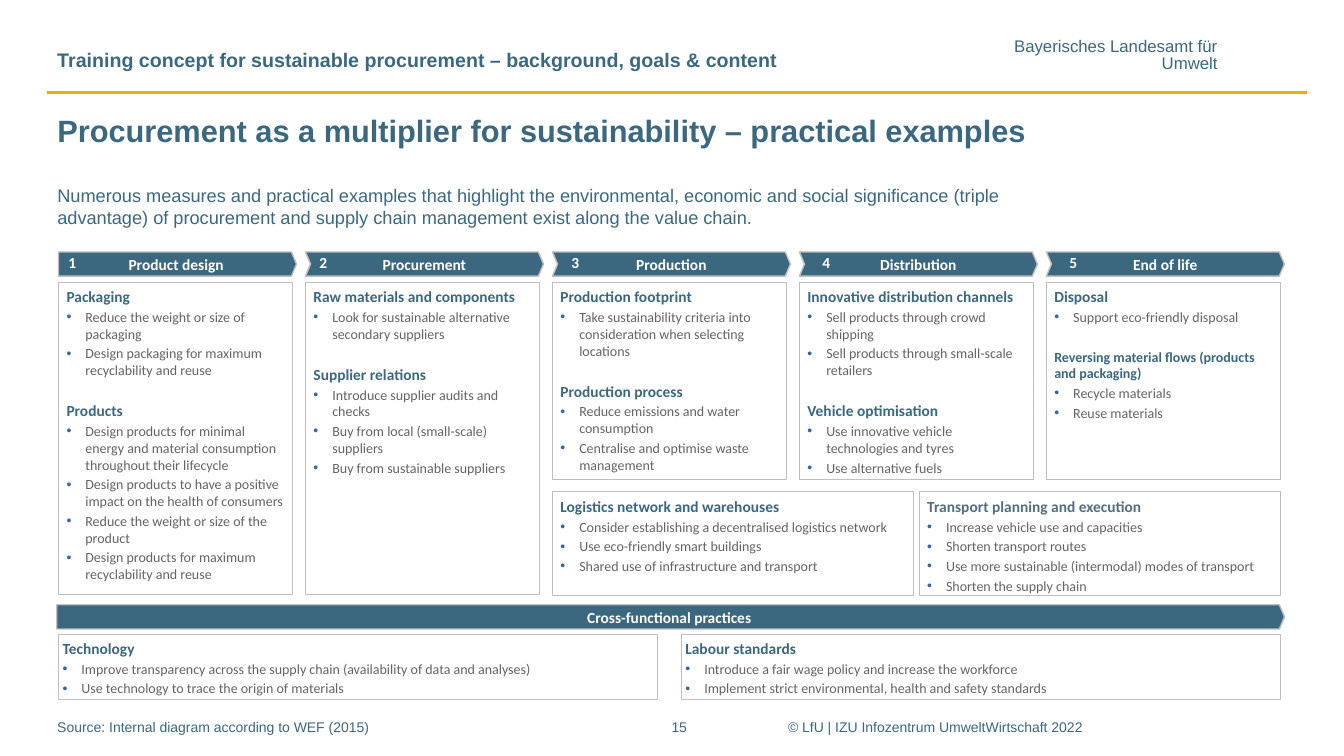
from lxml import etree
from pptx import Presentation
from pptx.dml.color import RGBColor
from pptx.enum.shapes import MSO_CONNECTOR, MSO_SHAPE
from pptx.enum.text import MSO_ANCHOR, MSO_AUTO_SIZE, PP_ALIGN
from pptx.oxml.ns import qn
from pptx.util import Pt

COLORS = {
    "petrol": "3B687F",
    "slate": "526E7F",
    "gray": "646466",
    "border": "BFBFBF",
    "bullet": "3963A1",
    "amber": "F9AA00",
    "white": "FFFFFF",
}

# Column grid of the value chain
LEFT, COLUMN_STEP, PANEL_WIDTH = 41.8, 176.4, 167
PANEL_TOP, TALL, SHORT = 201.6, 223.2, 141.1

# Stage, left edge of its number, panel height, sections (heading, size, items)
STAGES = [
    ("Product design", 41.8, TALL, [
        ("Packaging", 11, [
            "Reduce the weight or size of packaging",
            "Design packaging for maximum recyclability and reuse"]),
        ("Products", 11, [
            "Design products for minimal energy and material consumption throughout their lifecycle",
            "Design products to have a positive impact on the health of consumers",
            "Reduce the weight or size of the product",
            "Design products for maximum recyclability and reuse"])]),
    ("Procurement", 221, TALL, [
        ("Raw materials and components", 11, [
            "Look for sustainable alternative secondary suppliers"]),
        ("Supplier relations", 11, [
            "Introduce supplier audits and checks",
            "Buy from local (small-scale) suppliers",
            "Buy from sustainable suppliers"])]),
    ("Production", 401, SHORT, [
        ("Production footprint", 11, [
            "Take sustainability criteria into consideration when selecting locations"]),
        ("Production process", 11, [
            "Reduce emissions and water consumption",
            "Centralise and optimise waste management"])]),
    ("Distribution", 580.3, SHORT, [
        ("Innovative distribution channels", 11, [
            "Sell products through crowd shipping",
            "Sell products through small-scale retailers"]),
        ("Vehicle optimisation", 11, [
            "Use innovative vehicle technologies and tyres",
            "Use alternative fuels"])]),
    ("End of life", 756.7, SHORT, [
        ("Disposal", 11, ["Support eco-friendly disposal"]),
        ("Reversing material flows (products and packaging)", 10, [
            "Recycle materials",
            "Reuse materials"])]),
]
LOGISTICS = [("Logistics network and warehouses", 11, [
    "Consider establishing a decentralised logistics network",
    "Use eco-friendly smart buildings",
    "Shared use of infrastructure and transport"])]
TRANSPORT = [("Transport planning and execution", 11, [
    "Increase vehicle use and capacities",
    "Shorten transport routes",
    "Use more sustainable (intermodal) modes of transport",
    "Shorten the supply chain"])]
TECHNOLOGY = [("Technology", 11, [
    "Improve transparency across the supply chain (availability of data and analyses)",
    "Use technology to trace the origin of materials"])]
LABOUR = [("Labour standards", 11, [
    "Introduce a fair wage policy and increase the workforce",
    "Implement strict environmental, health and safety standards"])]


def rgb(name):
    return RGBColor.from_string(COLORS[name])


def place(shape, left, top, width, height):
    shape.left, shape.top = Pt(left), Pt(top)
    shape.width, shape.height = Pt(width), Pt(height)


def set_bullet(paragraph, character="•", indent=13.5):
    """Give the paragraph a bullet, or none if the character is None."""
    properties = paragraph._p.get_or_add_pPr()
    properties.set("marL", str(Pt(indent)))
    properties.set("indent", str(-Pt(indent)))
    if character is None:
        etree.SubElement(properties, qn("a:buNone"))
        return
    color = etree.SubElement(properties, qn("a:buClr"))
    etree.SubElement(color, qn("a:srgbClr"), val=COLORS["bullet"])
    etree.SubElement(properties, qn("a:buFont"), typeface="Arial")
    etree.SubElement(properties, qn("a:buChar"), char=character)


def add_paragraph(frame, text, size=11, font="Arial", color="petrol", bold=False,
                  align=PP_ALIGN.LEFT, before=0, spacing=None, bullet=False):
    """Write text as the next paragraph of the frame."""
    paragraph = frame.paragraphs[0]
    if paragraph.runs:
        paragraph = frame.add_paragraph()
    if bullet:
        set_bullet(paragraph)
    paragraph.alignment = align
    paragraph.space_before = Pt(before)
    if spacing:
        paragraph.line_spacing = spacing
    run = paragraph.add_run()
    run.text = text
    run.font.name, run.font.size, run.font.bold = font, Pt(size), bold
    run.font.color.rgb = rgb(color)
    return paragraph


def set_frame(frame, anchor=MSO_ANCHOR.TOP, side=7.2, edge=3.6, wrap=True):
    frame.auto_size = MSO_AUTO_SIZE.NONE
    frame.word_wrap = wrap
    frame.vertical_anchor = anchor
    frame.margin_left = frame.margin_right = Pt(side)
    frame.margin_top = frame.margin_bottom = Pt(edge)


def add_label(slide, box, lines, anchor=MSO_ANCHOR.TOP, side=7.2, edge=3.6,
              wrap=True, **text_format):
    left, top, width, height = map(Pt, box)
    frame = slide.shapes.add_textbox(left, top, width, height).text_frame
    set_frame(frame, anchor, side, edge, wrap)
    for line in lines:
        add_paragraph(frame, line, **text_format)


def add_block(slide, kind, box, line_width, fill=None):
    shape = slide.shapes.add_shape(kind, *map(Pt, box))
    shape.shadow.inherit = False
    if fill:
        shape.fill.solid()
        shape.fill.fore_color.rgb = rgb(fill)
    else:
        shape.fill.background()
    shape.line.color.rgb = rgb("border")
    shape.line.width = Pt(line_width)
    return shape


def add_banner(slide, kind, box, text):
    banner = add_block(slide, kind, box, 1, "petrol")
    banner.adjustments[0] = 0.21
    set_frame(banner.text_frame, MSO_ANCHOR.MIDDLE, 2.9, 2.9)
    add_paragraph(banner.text_frame, text, font="Calibri", color="white", bold=True,
                  align=PP_ALIGN.CENTER, spacing=1.06)


def add_panel(slide, box, sections, side=5.7, heading_color="petrol"):
    frame = add_block(slide, MSO_SHAPE.RECTANGLE, box, 0.75).text_frame
    set_frame(frame, side=side)
    for index, (heading, size, items) in enumerate(sections):
        add_paragraph(frame, heading, size=size, font="Calibri", color=heading_color,
                      bold=True, before=16.2 if index else 0)
        for item in items:
            add_paragraph(frame, item, size=10, font="Calibri", color="gray",
                          before=2, bullet=True)


def add_rule(slide, left, right, top):
    rule = slide.shapes.add_connector(
        MSO_CONNECTOR.STRAIGHT, Pt(left), Pt(top), Pt(right), Pt(top))
    rule.line.color.rgb = rgb("amber")
    rule.line.width = Pt(2)
    etree.SubElement(rule._element.spPr, qn("a:effectLst"))


def fill_placeholder(shape, box, text, anchor, **text_format):
    place(shape, *box)
    set_frame(shape.text_frame, anchor)
    paragraph = add_paragraph(shape.text_frame, text, **text_format)
    set_bullet(paragraph, None, 0)


def main():
    presentation = Presentation()
    presentation.slide_width, presentation.slide_height = Pt(960), Pt(540)
    slide = presentation.slides.add_slide(presentation.slide_layouts[1])

    # Header, title and introduction
    add_rule(slide, 33.8, 933.8, 65.8)
    add_label(slide, (723.6, 27.4, 146.2, 24.5), ["Bayerisches Landesamt für", "Umwelt"],
              side=0, edge=0, wrap=False, size=12, align=PP_ALIGN.RIGHT, spacing=0.85)
    add_label(slide, (33.8, 17.3, 677.5, 37.4),
              ["Training concept for sustainable procurement – background, goals & content"],
              anchor=MSO_ANCHOR.BOTTOM, size=14, bold=True, spacing=0.85)
    fill_placeholder(slide.shapes.title, (33.8, 73.4, 900, 39.6),
                     "Procurement as a multiplier for sustainability – practical examples",
                     MSO_ANCHOR.MIDDLE, size=22, bold=True)
    fill_placeholder(slide.placeholders[1], (33.8, 128.2, 712.8, 38.9),
                     "Numerous measures and practical examples that highlight the environmental, "
                     "economic and social significance (triple advantage) of procurement and "
                     "supply chain management exist along the value chain.",
                     MSO_ANCHOR.TOP, size=13)

    # Value chain stages
    for index, (stage, number_left, height, sections) in enumerate(STAGES):
        left = LEFT + index * COLUMN_STEP
        kind = MSO_SHAPE.CHEVRON if index else MSO_SHAPE.PENTAGON
        add_panel(slide, (left, PANEL_TOP, PANEL_WIDTH, height), sections)
        add_banner(slide, kind, (left, 180, 170, 17.3), stage)
        add_label(slide, (number_left, 177.1, 20.2, 20.9), [str(index + 1)],
                  anchor=MSO_ANCHOR.MIDDLE, wrap=False, font="Calibri",
                  color="white", bold=True)

    # Panels that span several stages
    add_panel(slide, (394.6, 351.4, 257.8, 74.2), LOGISTICS)
    add_panel(slide, (656.6, 351.4, 257.8, 74.2), TRANSPORT, heading_color="slate")

    # Cross-functional practices
    add_banner(slide, MSO_SHAPE.PENTAGON, (40.5, 432, 877, 17.3), "Cross-functional practices")
    add_panel(slide, (LEFT, 452.9, 427.7, 46.8), TECHNOLOGY, side=2.9)
    add_panel(slide, (486.7, 452.9, 427.7, 46.8), LABOUR, side=2.9)

    # Footer
    add_label(slide, (33.8, 509.8, 386, 22.3),
              ["Source: Internal diagram according to WEF (2015)"], size=10)
    add_label(slide, (460, 509.8, 50.4, 22.3), ["15"], size=10, align=PP_ALIGN.CENTER)
    add_label(slide, (555.8, 509.8, 386, 22.3),
              ["© LfU | IZU Infozentrum UmweltWirtschaft 2022"], size=10)

    presentation.save("out.pptx")


if __name__ == "__main__":
    main()
